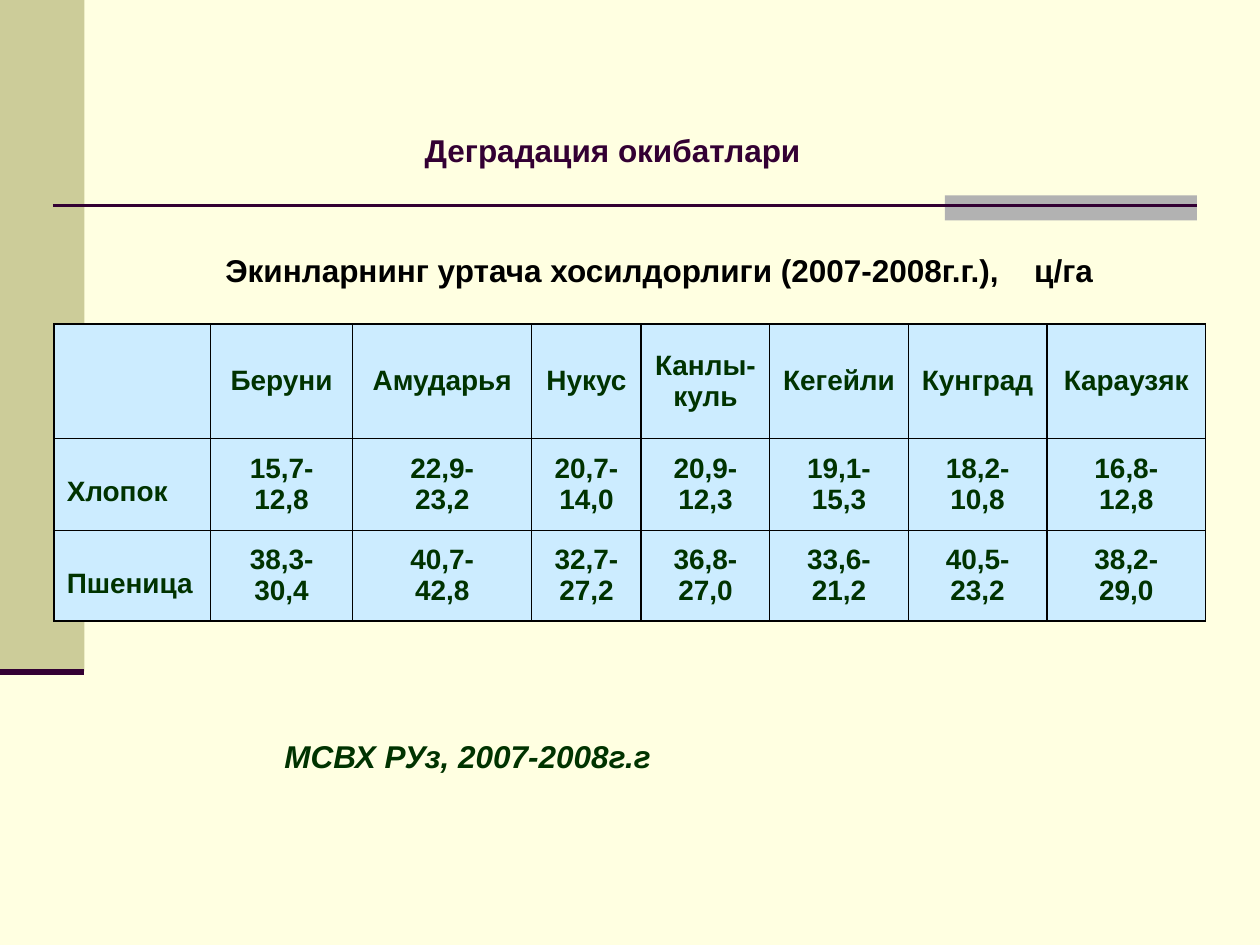
"""Build a slide with a table of average crop yields by district."""
from typing import NamedTuple

from lxml import etree
from pptx import Presentation
from pptx.dml.color import RGBColor
from pptx.enum import shapes, text
from pptx.oxml import ns
from pptx.util import Inches, Pt

CREAM = RGBColor(0xFF, 0xFF, 0xE1)
KHAKI = RGBColor(0xCC, 0xCC, 0x99)
GRAY = RGBColor(0xB2, 0xB2, 0xB2)
PLUM = RGBColor(0x33, 0x00, 0x33)
GREEN = RGBColor(0x00, 0x33, 0x00)
SKY = RGBColor(0xCC, 0xEC, 0xFF)
BLACK = RGBColor(0, 0, 0)


class Box(NamedTuple):
    left: float
    top: float
    width: float
    height: float

    def lengths(self) -> list:
        return [Inches(value) for value in self]


class Block(NamedTuple):
    box: Box
    color: RGBColor


class Rule(NamedTuple):
    left: float
    right: float
    y: float
    weight: float


BLOCKS = [
    Block(Box(0, 0, 0.67, 5.33), KHAKI),
    Block(Box(7.5, 1.55, 2, 0.2), GRAY),
]
RULES = [Rule(0.42, 9.5, 1.63, 1.5), Rule(0, 0.67, 5.33, 3.5)]
COLUMN_WIDTHS = [1.24, 1.13, 1.42, 0.87, 1.02, 1.1, 1.1, 1.26]
ROW_HEIGHTS = [0.91, 0.73, 0.72]
YIELDS = [
    ["", "Беруни", "Амударья", "Нукус", "Канлы-куль", "Кегейли", "Кунград", "Караузяк"],
    ["Хлопок", "15,7-\n12,8", "22,9-\n23,2", "20,7-14,0", "20,9-\n12,3",
     "19,1-\n15,3", "18,2-\n10,8", "16,8-\n12,8"],
    ["Пшеница", "38,3-\n30,4", "40,7-\n42,8", "32,7-27,2", "36,8-\n27,0",
     "33,6-\n21,2", "40,5-\n23,2", "38,2-\n29,0"],
]


def style_paragraph(paragraph, size: float, color: RGBColor, italic: bool = False) -> None:
    font = paragraph.font
    font.name, font.size = "Arial", Pt(size)
    font.bold, font.italic = True, italic
    font.color.rgb = color


def add_block(slide, block: Block) -> None:
    shape = slide.shapes.add_shape(shapes.MSO_SHAPE.RECTANGLE, *block.box.lengths())
    shape.shadow.inherit = False
    shape.fill.solid()
    shape.fill.fore_color.rgb = block.color
    shape.line.fill.background()


def add_rule(slide, rule: Rule) -> None:
    y = Inches(rule.y)
    connector = slide.shapes.add_connector(
        shapes.MSO_CONNECTOR.STRAIGHT, Inches(rule.left), y, Inches(rule.right), y)
    connector.line.color.rgb = PLUM
    connector.line.width = Pt(rule.weight)
    etree.SubElement(connector._element.spPr, ns.qn("a:effectLst"))


def fill_text(shape, box: Box, wording: str, color: RGBColor, italic: bool = False):
    shape.left, shape.top, shape.width, shape.height = box.lengths()
    frame = shape.text_frame
    frame.text = wording
    frame.word_wrap = True
    frame.auto_size = text.MSO_AUTO_SIZE.NONE
    frame.vertical_anchor = text.MSO_ANCHOR.TOP
    paragraph = frame.paragraphs[0]
    paragraph.alignment = text.PP_ALIGN.LEFT
    style_paragraph(paragraph, 18, color, italic)
    return paragraph


def add_label(slide, box: Box, wording: str, color: RGBColor, italic: bool = False):
    return fill_text(slide.shapes.add_textbox(*box.lengths()), box, wording, color, italic)


def add_tab_stop(paragraph, position: float) -> None:
    tabs = etree.Element(ns.qn("a:tabLst"))
    etree.SubElement(tabs, ns.qn("a:tab"), pos=str(Inches(position)), algn="l")
    paragraph._p.get_or_add_pPr().insert(0, tabs)


def add_borders(cell) -> None:
    properties = cell._tc.get_or_add_tcPr()
    for side in ("lnL", "lnR", "lnT", "lnB"):
        line = etree.SubElement(properties, ns.qn(f"a:{side}"), w=str(Pt(1)))
        fill = etree.SubElement(line, ns.qn("a:solidFill"))
        etree.SubElement(fill, ns.qn("a:srgbClr"), val=str(BLACK))


def fill_cell(cell, wording: str, is_crop: bool) -> None:
    add_borders(cell)
    cell.fill.solid()
    cell.fill.fore_color.rgb = SKY
    cell.text = wording
    if is_crop:
        cell.margin_top = Inches(0.3)
    else:
        cell.vertical_anchor = text.MSO_ANCHOR.MIDDLE
    for paragraph in cell.text_frame.paragraphs:
        paragraph.alignment = text.PP_ALIGN.LEFT if is_crop else text.PP_ALIGN.CENTER
        style_paragraph(paragraph, 16, GREEN)


def add_yield_table(slide) -> None:
    box = Box(0.43, 2.57, sum(COLUMN_WIDTHS), sum(ROW_HEIGHTS))
    table = slide.shapes.add_table(len(YIELDS), len(COLUMN_WIDTHS), *box.lengths()).table
    table.first_row = table.horz_banding = False
    for column, width in zip(table.columns, COLUMN_WIDTHS):
        column.width = Inches(width)
    for row, height, values in zip(table.rows, ROW_HEIGHTS, YIELDS):
        row.height = Inches(height)
        for index, (cell, value) in enumerate(zip(row.cells, values)):
            fill_cell(cell, value, is_crop=index == 0)


def main() -> None:
    presentation = Presentation()
    presentation.slide_width, presentation.slide_height = Inches(10), Inches(7.5)
    slide = presentation.slides.add_slide(presentation.slide_layouts[5])
    slide.background.fill.solid()
    slide.background.fill.fore_color.rgb = CREAM
    for block in BLOCKS:
        add_block(slide, block)
    for rule in RULES:
        add_rule(slide, rule)
    add_yield_table(slide)
    fill_text(slide.shapes.title, Box(3.27, 0.99, 3.19, 0.4), "Деградация окибатлари", PLUM)
    caption = add_label(slide, Box(1.69, 1.94, 7.17, 0.4),
                        "Экинларнинг уртача хосилдорлиги (2007-2008г.г.),\tц/га", BLACK)
    add_tab_stop(caption, 6.42)
    add_label(slide, Box(2.16, 5.8, 3.14, 0.4), "МСВХ РУз, 2007-2008г.г", GREEN, italic=True)
    presentation.save("out.pptx")


if __name__ == "__main__":
    main()
